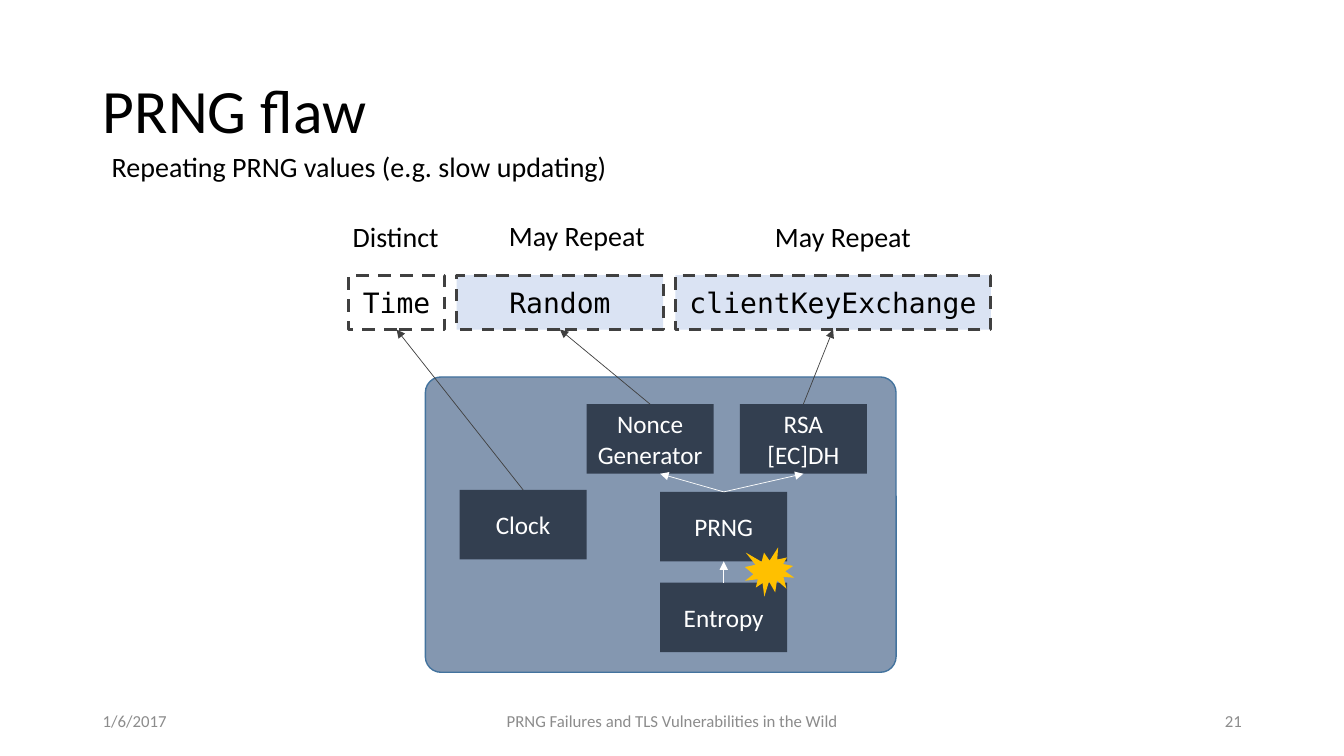
from dataclasses import dataclass

from lxml import etree
from pptx import Presentation
from pptx import util as u
from pptx.dml.color import RGBColor
from pptx.enum import dml, shapes, text
from pptx.oxml import ns

TOP, LEFT, BOTTOM, RIGHT = 0, 1, 2, 3
ALIGN = text.PP_ALIGN


@dataclass(frozen=True)
class Theme:
    font: str = "Calibri"
    code_font: str = "DejaVu Sans Mono"
    ink: str = "000000"
    white: str = "FFFFFF"
    muted: str = "8C8C8C"
    outline: str = "404040"
    panel: str = "8497B0"
    panel_edge: str = "43739E"
    block: str = "333F50"
    flagged: str = "DAE3F3"
    burst: str = "FFC000"
    title_size: float = 44
    label_size: float = 20
    block_size: float = 18
    footer_size: float = 12


class SlideBuilder:
    def __init__(self, slide, theme):
        self.slide = slide
        self.theme = theme

    def set_text(self, shape, words, size, color, font=None, align=ALIGN.LEFT,
                 spacing=1.0, **frame_format):
        frame = shape.text_frame
        frame.text = words
        for name, value in frame_format.items():
            setattr(frame, name, value)
        for paragraph in frame.paragraphs:
            for name, value in {"alignment": align, "line_spacing": spacing}.items():
                setattr(paragraph, name, value)
            font_format = {"name": font or self.theme.font, "size": u.Pt(size)}
            for name, value in font_format.items():
                setattr(paragraph.runs[0].font, name, value)
            paragraph.runs[0].font.color.rgb = RGBColor.from_string(color)

    def title(self, words, left, top, width, height):
        title = self.slide.shapes.title
        place = {"left": left, "top": top, "width": width, "height": height}
        for name, value in place.items():
            setattr(title, name, u.Pt(value))
        self.set_text(title, words, self.theme.title_size, self.theme.ink,
                      spacing=0.9, vertical_anchor=text.MSO_ANCHOR.MIDDLE)

    def text_box(self, words, left, top, width, height, size, color,
                 align=ALIGN.LEFT, **frame_format):
        box = self.slide.shapes.add_textbox(*map(u.Pt, (left, top, width, height)))
        self.set_text(box, words, size, color, align=align, **frame_format)

    def shape(self, kind, left, top, width, height, fill=None, edge=None,
              edge_width=1, dash=None):
        shape = self.slide.shapes.add_shape(
            kind, *map(u.Pt, (left, top, width, height)))
        shape.shadow.inherit = False
        if fill:
            shape.fill.solid()
            shape.fill.fore_color.rgb = RGBColor.from_string(fill)
        else:
            shape.fill.background()
        if edge:
            shape.line.color.rgb = RGBColor.from_string(edge)
            for name, value in {"width": u.Pt(edge_width), "dash_style": dash}.items():
                setattr(shape.line, name, value)
        else:
            shape.line.fill.background()
        return shape

    def block(self, words, left, top):
        """Dark component box; every block has the same size."""
        block = self.shape(shapes.MSO_SHAPE.RECTANGLE, left, top, 90.72, 49.68,
                           fill=self.theme.block)
        self.set_text(block, words, self.theme.block_size, self.theme.white,
                      align=ALIGN.CENTER, word_wrap=True,
                      vertical_anchor=text.MSO_ANCHOR.MIDDLE)
        return block

    def field(self, words, left, width, fill):
        """Dashed box for one field of the message."""
        field = self.shape(shapes.MSO_SHAPE.RECTANGLE, left, 196.56, width, 38.88,
                           fill, self.theme.outline, 2.25, dml.MSO_LINE.DASH)
        self.set_text(field, words, self.theme.label_size, self.theme.ink,
                      self.theme.code_font, ALIGN.CENTER, word_wrap=True,
                      vertical_anchor=text.MSO_ANCHOR.MIDDLE)
        return field

    def arrow(self, source, color, target=None, end=(0, 0)):
        """Arrow from the top of source to the bottom of target, or to the point end."""
        x, y = map(u.Pt, end)
        arrow = self.slide.shapes.add_connector(
            shapes.MSO_CONNECTOR.STRAIGHT, x, y, x, y)
        arrow.begin_connect(source, TOP)
        if target is not None:
            arrow.end_connect(target, BOTTOM)
        arrow.line.color.rgb = RGBColor.from_string(color)
        arrow.line.width = u.Pt(0.5)
        properties = arrow.element.spPr
        etree.SubElement(properties.find(ns.qn("a:ln")), ns.qn("a:tailEnd"),
                         type="triangle")
        etree.SubElement(properties, ns.qn("a:effectLst"))


def main():
    presentation = Presentation()
    presentation.slide_width, presentation.slide_height = u.Pt(960), u.Pt(540)
    theme = Theme()
    title_only = presentation.slide_layouts[5]
    builder = SlideBuilder(presentation.slides.add_slide(title_only), theme)

    panel = builder.shape(shapes.MSO_SHAPE.ROUNDED_RECTANGLE, 303.84, 269.28,
                          336.24, 210.96, theme.panel, theme.panel_edge)
    panel.adjustments[0] = 0.053
    builder.title("PRNG flaw", 66.24, 28.8, 828, 104.4)
    builder.text_box("Repeating PRNG values (e.g. slow updating)",
                     72.72, 102.96, 821.52, 31.68, theme.label_size, theme.ink,
                     word_wrap=True)

    footers = [
        ("1/6/2017", 66.24, 216, ALIGN.LEFT),
        ("PRNG Failures and TLS Vulnerabilities in the Wild", 318.24, 324, ALIGN.CENTER),
        ("21", 678.24, 216, ALIGN.RIGHT),
    ]
    for words, left, width, align in footers:
        builder.text_box(words, left, 500.4, width, 28.8, theme.footer_size,
                         theme.muted, align, word_wrap=True,
                         vertical_anchor=text.MSO_ANCHOR.MIDDLE)

    captions = [("Distinct", 244.8, 153.36, 77.04),
                ("May Repeat", 356.4, 152.64, 112.32),
                ("May Repeat", 546.48, 153.36, 112.32)]
    for words, left, top, width in captions:
        builder.text_box(words, left, top, width, 31.68, theme.label_size, theme.ink,
                         word_wrap=False,
                         auto_size=text.MSO_AUTO_SIZE.SHAPE_TO_FIT_TEXT)

    fields = {}
    left, gap = 249.12, 8.64
    for words, width, fill in [("Time", 68.4, None),
                               ("Random", 147.6, theme.flagged),
                               ("clientKeyExchange", 225.36, theme.flagged)]:
        fields[words] = builder.field(words, left, width, fill)
        left += width + gap

    clock = builder.block("Clock", 328.32, 349.92)
    prng = builder.block("PRNG", 471.6, 351.36)
    entropy = builder.block("Entropy", 471.6, 416.16)
    nonce = builder.block("Nonce\nGenerator", 419.04, 288.72)
    key_exchange = builder.block("RSA\n[EC]DH", 528.48, 288.72)

    builder.arrow(entropy, theme.white, prng)
    builder.arrow(prng, theme.white, end=(471.6, 338.4))
    builder.arrow(prng, theme.white, key_exchange)
    builder.arrow(clock, theme.outline, fields["Time"])
    builder.arrow(nonce, theme.outline, fields["Random"])
    builder.arrow(key_exchange, theme.outline, fields["clientKeyExchange"])

    builder.shape(shapes.MSO_SHAPE.EXPLOSION1, 532.08, 390.96, 35.28, 35.28,
                  fill=theme.burst)
    presentation.save("out.pptx")


if __name__ == "__main__":
    main()
